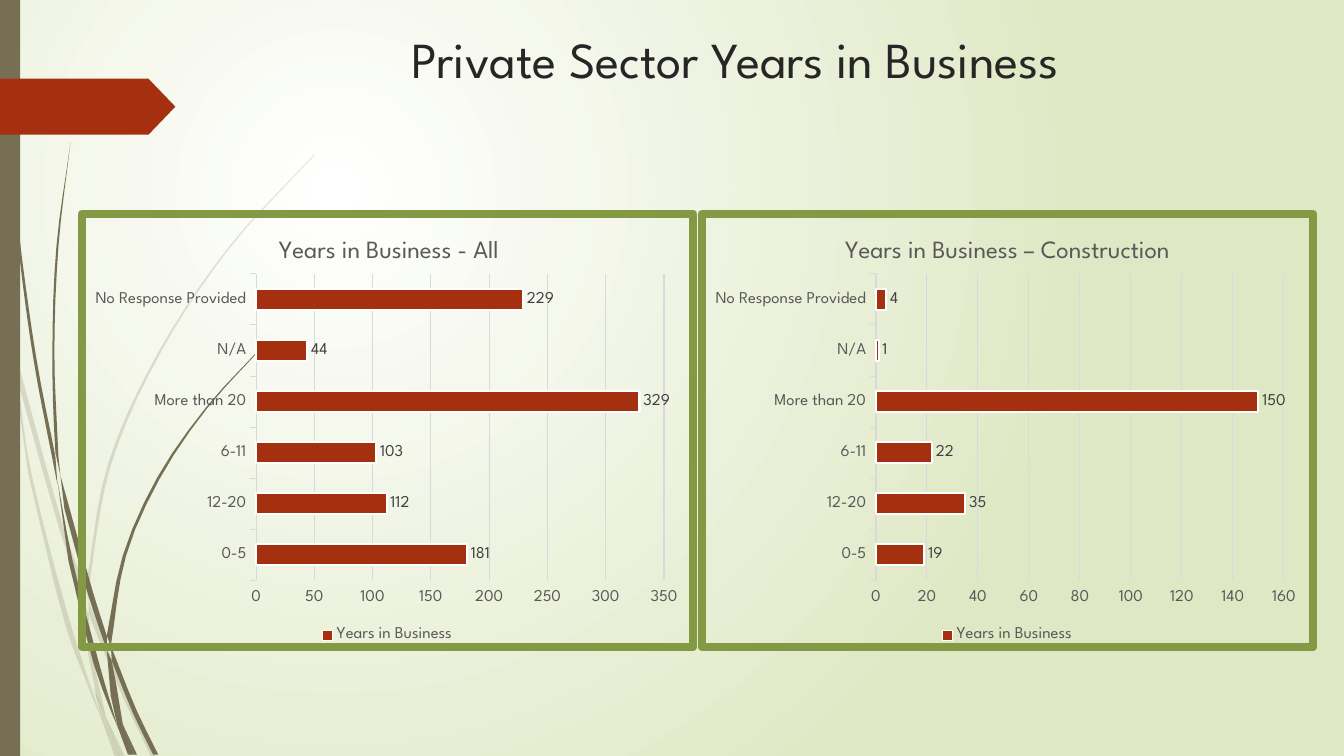
from math import ceil, dist

from lxml import etree
from pptx import Presentation
from pptx.chart.data import CategoryChartData
from pptx.dml.color import RGBColor
from pptx.enum.chart import XL_CHART_TYPE, XL_LABEL_POSITION, XL_LEGEND_POSITION, XL_TICK_MARK
from pptx.enum.shapes import MSO_SHAPE
from pptx.enum.text import MSO_ANCHOR, MSO_AUTO_SIZE, PP_ALIGN
from pptx.oxml import parse_xml
from pptx.oxml.ns import nsdecls, qn
from pptx.util import Pt

BAR = XL_CHART_TYPE.BAR_CLUSTERED
OUTSIDE_END = XL_LABEL_POSITION.OUTSIDE_END
LEGEND_BOTTOM = XL_LEGEND_POSITION.BOTTOM
TICK_OUT = XL_TICK_MARK.OUTSIDE
RECT, ARROW = MSO_SHAPE.RECTANGLE, MSO_SHAPE.PENTAGON
TOP, CENTER, NO_FIT = MSO_ANCHOR.TOP, PP_ALIGN.CENTER, MSO_AUTO_SIZE.NONE

FONT = "League Spartan"
WHITE = RGBColor(0xFF, 0xFF, 0xFF)
PALE_GREEN = RGBColor(0xDF, 0xE8, 0xC4)
GREEN = RGBColor(0x83, 0x99, 0x43)
OLIVE = RGBColor(0x76, 0x6F, 0x54)
RUST = RGBColor(0xA5, 0x30, 0x10)
INK = RGBColor(0x26, 0x26, 0x26)
LABEL_GRAY = RGBColor(0x40, 0x40, 0x40)
TEXT_GRAY = RGBColor(0x59, 0x59, 0x59)
GRID_GRAY = RGBColor(0xD9, 0xD9, 0xD9)

WISP_UNIT = Pt(0.072)
MAX_STEP = 300
YEARS = ["0-5", "12-20", "6-11", "More than 20", "N/A", "No Response Provided"]
CHARTS = [
    ("Years in Business - All", [181, 112, 103, 329, 44, 229], 350, 50, 0.315),
    ("Years in Business – Construction", [19, 35, 22, 150, 1, 4], 160, 20, 0.227),
]
FAINT_WISPS = [
    ("0,282 9,322 11,350", "10,344 0,299"),
    ("14,345 62,520 85,586", "84,599 58,522 17,376"),
    ("88,596 92,607 127,692 155,751", "150,751 123,694 88,610"),
    ("105,711 124,751", "119,751"),
    ("11,350 17,376 31,469 70,619 101,714", "92,693 65,621 28,470"),
    ("84,599 88,610 91,646 105,711", "96,692 87,646"),
    ("88,596 88,584 110,462 160,349 229,245 312,154",
     "312,153 228,244 158,348 107,461 85,584"),
    ("101,714 119,751", "114,751"),
    ("93,683 105,711 119,751", "101,714"),
]
DARK_WISPS = [
    ("3,0 7,110 17,233 33,355 57,481", "55,453 36,355 19,232 8,109 4,0"),
    ("60,472 93,590 106,631", "106,645 88,592 64,505"),
    ("110,641 136,706 157,749", "152,749 132,708 111,656"),
    ("57,477 72,556 98,657 117,722", "111,708 93,659 68,557"),
    ("70,141 56,245 52,349 55,449 60,472", "58,453 54,349 58,245 70,141"),
    ("122,719 136,749", "133,749"),
    ("106,631 122,551 156,474 204,405 260,344",
     "261,344 205,406 158,476 125,552 110,641"),
    ("117,722 131,749", "127,749"),
    ("106,645 111,656 122,719", "116,706 110,691"),
    ("110,691 122,719 133,749", "130,749 117,722"),
]


def set_attrs(obj, values):
    """Set each named attribute on an object."""
    for name, value in values.items():
        setattr(obj, name, value)


def set_font(font, size, color):
    """Apply the slide's typeface with a size and colour."""
    set_attrs(font, {"name": FONT, "size": Pt(size), "bold": False})
    font.color.rgb = color


def paint(sp, color):
    """Give a shape a flat fill with no line or shadow."""
    sp.shadow.inherit = False
    sp.fill.solid()
    sp.fill.fore_color.rgb = color
    sp.line.fill.background()


def add_background(s):
    """Fill the background with a circular glow."""
    fill = s.background.fill
    fill.gradient()
    for stop, color, position in zip(fill.gradient_stops, (WHITE, PALE_GREEN), (0, 1)):
        stop.color.rgb = color
        stop.position = position
    grad = s._element.find(".//" + qn("a:gradFill"))
    grad.remove(grad.find(qn("a:lin")))
    grad.append(parse_xml(
        f'<a:path {nsdecls("a")} path="circle">'
        '<a:fillToRect l="50000" t="50000" r="100000" b="100000"/></a:path>'))


def smooth_edge(text):
    """Return a smooth run of points through the listed anchors."""
    pts = [tuple(10 * int(n) for n in pair.split(",")) for pair in text.split()]
    tangents = []
    for i in range(len(pts)):
        a, b = pts[max(i - 1, 0)], pts[min(i + 1, len(pts) - 1)]
        length = dist(a, b) or 1
        tangents.append([(q - p) / length for p, q in zip(a, b)])
    edge = pts[:1]
    for i, (a, b) in enumerate(zip(pts, pts[1:])):
        chord = dist(a, b)
        steps = ceil(chord / MAX_STEP)
        for step in range(1, steps + 1):
            t = step / steps
            edge.append(tuple(
                (2 * t**3 - 3 * t**2 + 1) * a[k] + (3 * t**2 - 2 * t**3) * b[k]
                + chord * ((t**3 - 2 * t**2 + t) * tangents[i][k]
                           + (t**3 - t**2) * tangents[i + 1][k])
                for k in (0, 1)))
    return edge


def add_wisps(s, wisps, alpha):
    """Draw a group of curved grass blades."""
    group = s.shapes.add_group_shape()
    for outward, back in wisps:
        pts = smooth_edge(outward) + smooth_edge(back)
        builder = group.shapes.build_freeform(*pts[0], scale=WISP_UNIT)
        builder.add_line_segments(pts[1:], close=True)
        sp = builder.convert_to_shape()
        paint(sp, OLIVE)
        if alpha < 100:
            color = sp._element.spPr.find(".//" + qn("a:srgbClr"))
            etree.SubElement(color, qn("a:alpha")).set("val", str(alpha * 1000))


def add_block(s, kind, left, top, width, height, color):
    """Add a plain filled preset shape."""
    sp = s.shapes.add_shape(kind, Pt(left), Pt(top), Pt(width), Pt(height))
    paint(sp, color)
    return sp


def format_title(title, text):
    """Place and style the slide title."""
    set_attrs(title, {"left": Pt(174.24), "top": Pt(16.56), "width": Pt(702), "height": Pt(100.8)})
    tf = title.text_frame
    set_attrs(tf, {"text": text, "vertical_anchor": TOP, "auto_size": NO_FIT, "word_wrap": True})
    p = tf.paragraphs[0]
    p.alignment = CENTER
    set_font(p.runs[0].font, 36, INK)


def layout_xml(target, **places):
    """Build a manual chart layout from fractions of the frame."""
    inner = '<c:layoutTarget val="inner"/>' if target else ""
    modes = "".join(f'<c:{k}Mode val="edge"/>' for k in "xy")
    values = "".join(f'<c:{k} val="{v}"/>' for k, v in places.items())
    return parse_xml(f'<c:layout {nsdecls("c")}><c:manualLayout>{inner}{modes}{values}'
                     '</c:manualLayout></c:layout>')


def add_years_chart(s, left, heading, values, maximum, unit, heading_x):
    """Add one framed bar chart of years in business."""
    data = CategoryChartData()
    data.categories = YEARS
    data.add_series("Years in Business", values)
    chart = s.shapes.add_chart(BAR, Pt(left), Pt(149.76), Pt(442.8), Pt(315.36), data).chart
    set_font(chart.font, 10, TEXT_GRAY)
    set_attrs(chart, {"has_title": True, "has_legend": True})
    tf = chart.chart_title.text_frame
    tf.text = heading
    set_font(tf.paragraphs[0].runs[0].font, 18, TEXT_GRAY)
    set_attrs(chart.legend, {"position": LEGEND_BOTTOM, "include_in_layout": False})
    set_font(chart.legend.font, 12, TEXT_GRAY)

    cat, val = chart.category_axis, chart.value_axis
    for axis in (cat, val):
        axis.major_tick_mark = TICK_OUT
        set_font(axis.tick_labels.font, 12, TEXT_GRAY)
    set_attrs(val, {"minimum_scale": 0, "maximum_scale": maximum, "major_unit": unit})
    val.format.line.fill.background()
    for line in (cat.format.line, val.major_gridlines.format.line):
        line.color.rgb = GRID_GRAY
        line.width = Pt(0.75)

    plot = chart.plots[0]
    set_attrs(plot, {"gap_width": 150, "vary_by_categories": False, "has_data_labels": True})
    set_attrs(plot.data_labels, {"show_value": True, "position": OUTSIDE_END})
    set_font(plot.data_labels.font, 12, LABEL_GRAY)
    bars = plot.series[0].format
    bars.fill.solid()
    bars.fill.fore_color.rgb = RUST
    bars.line.color.rgb = WHITE
    bars.line.width = Pt(1.5)

    space = chart._chartSpace
    for part, index, layout in (
            ("c:title", 1, layout_xml(False, x=heading_x, y=0.045)),
            ("c:plotArea", 0, layout_xml(True, x=0.285, y=0.139, w=0.667, h=0.707))):
        parent = space.chart.find(qn(part))
        for old in parent.findall(qn("c:layout")):
            parent.remove(old)
        parent.insert(index, layout)
    space.find(qn("c:txPr")).addprevious(parse_xml(
        f'<c:spPr {nsdecls("c", "a")}><a:noFill/><a:ln w="{Pt(6)}"><a:solidFill>'
        f'<a:srgbClr val="{GREEN}"/></a:solidFill></a:ln></c:spPr>'))


def main():
    """Build and save the slide."""
    prs = Presentation()
    set_attrs(prs, {"slide_width": Pt(960), "slide_height": Pt(540)})
    s = prs.slides.add_slide(prs.slide_layouts[5])
    add_background(s)
    add_wisps(s, FAINT_WISPS, 20)
    add_wisps(s, DARK_WISPS, 100)
    add_block(s, RECT, 0, 0, 14.4, 540, OLIVE)
    add_block(s, ARROW, 0, 56.2, 125.3, 40, RUST).adjustments[0] = 0.48
    format_title(s.shapes.title, "Private Sector Years in Business")
    for i, content in enumerate(CHARTS):
        add_years_chart(s, 55.44 + i * 442.8, *content)
    prs.save("out.pptx")


if __name__ == "__main__":
    main()
